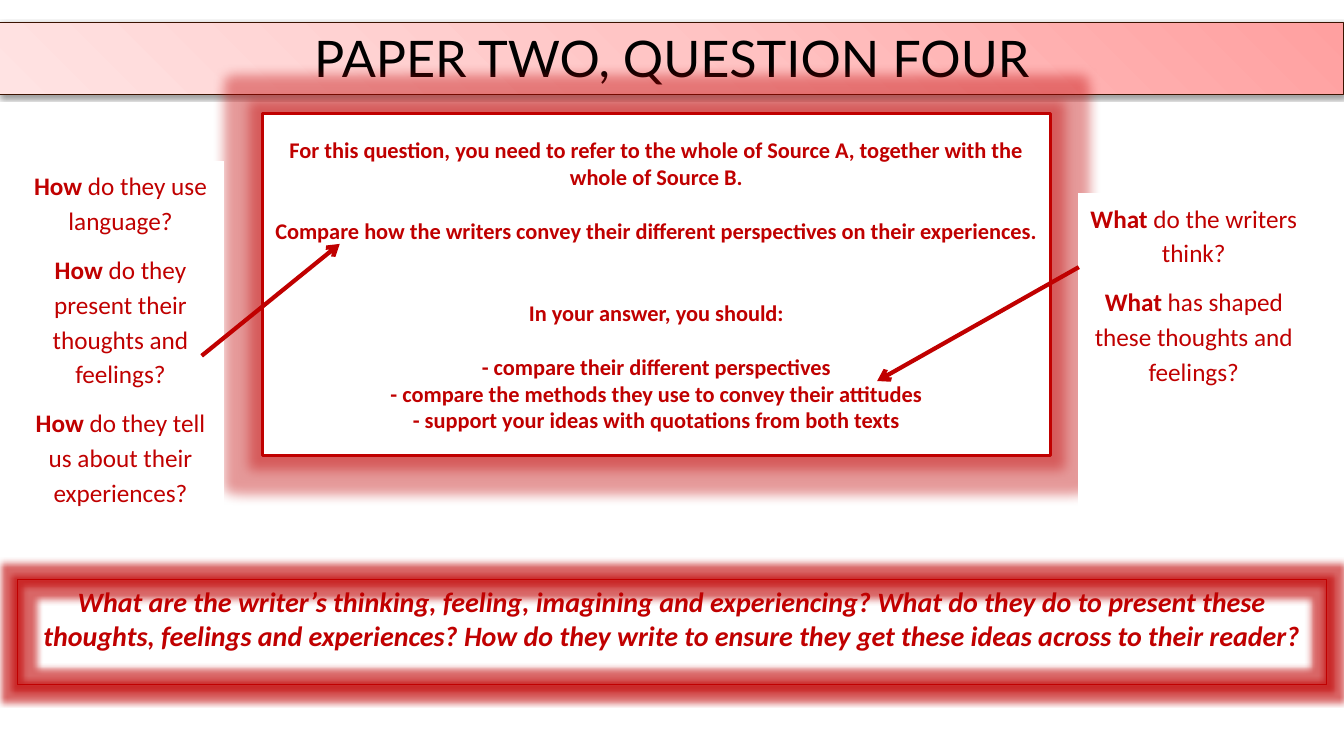
from copy import deepcopy

from pptx import Presentation
from pptx import util as u
from pptx.dml.color import RGBColor
from pptx.enum import shapes, text
from pptx.oxml import parse_xml
from pptx.oxml.ns import nsdecls, qn


def rgb(value):
    return RGBColor.from_string(value)


def effect(tag, attrs, color, alpha):
    """Return a glow or shadow element; alpha is in percent."""
    return parse_xml(
        f'<a:{tag} {nsdecls("a")} {attrs}><a:srgbClr val="{color}">'
        f'<a:alpha val="{alpha * 1000}"/></a:srgbClr></a:{tag}>')


class Slide:
    RED = "C00000"
    WHITE = "FFFFFF"
    BLACK = "000000"
    FONT = "Calibri"

    def __init__(self, prs):
        self.s = prs.slides.add_slide(prs.slide_layouts[6])

    def box(self, at, line, width, fill=None, anchor=text.MSO_ANCHOR.TOP):
        sp = self.s.shapes.add_shape(
            shapes.MSO_SHAPE.RECTANGLE, *(u.Inches(v) for v in at))
        sp.shadow.inherit = False
        if fill:
            sp.fill.solid()
            sp.fill.fore_color.rgb = rgb(fill)
        else:
            sp.fill.background()
        sp.line.color.rgb = rgb(line)
        sp.line.width = u.Pt(width)
        tf = sp.text_frame
        tf.word_wrap = True
        tf.vertical_anchor = anchor
        return sp

    def gradient(self, sp, stops, angle):
        """Fill with (position, colour) stops; angle is counter-clockwise."""
        sp.fill.gradient()
        sp.fill.gradient_angle = angle
        gs_list = sp.element.spPr.find(".//" + qn("a:gsLst"))
        for _ in stops[2:]:
            gs_list.append(deepcopy(gs_list[0]))
        for stop, (position, color) in zip(sp.fill.gradient_stops, stops):
            stop.position = position
            stop.color.rgb = rgb(color)

    def add_effect(self, sp, element):
        sp.element.spPr.find(qn("a:effectLst")).append(element)

    def glow(self, sp, radius, alpha):
        self.add_effect(
            sp, effect("glow", f'rad="{u.Pt(radius)}"', self.RED, alpha))

    def shadow(self, sp, blur, distance, alpha):
        attrs = (f'blurRad="{u.Pt(blur)}" dist="{u.Pt(distance)}" '
                 'dir="5400000" rotWithShape="0"')
        self.add_effect(sp, effect("outerShdw", attrs, self.BLACK, alpha))

    def paragraph(self, sp, runs, size, color=RED, font=FONT, italic=False):
        """Add a centred paragraph of (wording, bold) runs."""
        tf = sp.text_frame
        p = tf.paragraphs[0]
        if p.runs:
            p = tf.add_paragraph()
        p.alignment = text.PP_ALIGN.CENTER
        for wording, bold in runs:
            r = p.add_run()
            r.text = wording
            r.font.size = u.Pt(size)
            r.font.name = font
            r.font.bold = bold
            r.font.italic = italic
            r.font.color.rgb = rgb(color)
        return p

    def prompts(self, at, lead, questions):
        """Add a white box of questions that share a bold first word."""
        sp = self.box(at, self.WHITE, 0.5, self.WHITE)
        for question in questions:
            p = self.paragraph(sp, [(lead, True), (" " + question, False)], 18)
            p.line_spacing = 1.15
            p.space_after = u.Pt(10)

    def arrow(self, start, end):
        c = self.s.shapes.add_connector(
            shapes.MSO_CONNECTOR.STRAIGHT,
            *(u.Inches(v) for v in (*start, *end)))
        c.line.color.rgb = rgb(self.RED)
        c.line.width = u.Pt(3)
        c.line._get_or_add_ln().append(
            parse_xml(f'<a:tailEnd {nsdecls("a")} type="arrow"/>'))
        c.element.spPr.append(parse_xml(f'<a:effectLst {nsdecls("a")}/>'))


def main():
    prs = Presentation()
    prs.slide_width = u.Inches(13.33)
    prs.slide_height = u.Inches(7.5)
    s = Slide(prs)

    title = s.box((0, 0.22, 13.33, 0.72), "3C1301", 0.75)
    s.gradient(title, [(0, "FFA0A0"), (0.5, "FFC5C5"), (1, "FFE3E3")], 225)
    s.shadow(title, 3.1, 1.6, 38)
    s.paragraph(title, [("PAPER TWO, QUESTION FOUR", False)], 36,
                s.BLACK, "Lato")

    summary = s.box((0.17, 5.75, 12.99, 1.04), s.RED, 0.75)
    s.glow(summary, 8, 60)
    s.paragraph(summary, [(
        "What are the writer’s thinking, feeling, imagining and experiencing? "
        "What do they do to present these thoughts, feelings and experiences? "
        "How do they write to ensure they get these ideas across to their "
        "reader?", True)], 20, italic=True)

    task = s.box((2.6, 1.13, 7.82, 3.39), s.RED, 2.25, s.WHITE,
                 text.MSO_ANCHOR.MIDDLE)
    s.glow(task, 18, 40)
    line_height = 19.5
    for wording, gap_lines in [
        ("For this question, you need to refer to the whole of Source A, "
         "together with the whole of Source B.", 0),
        ("Compare how the writers convey their different perspectives on "
         "their experiences.", 1),
        ("In your answer, you should:", 2),
        ("- compare their different perspectives", 1),
        ("- compare the methods they use to convey their attitudes", 0),
        ("- support your ideas with quotations from both texts", 0),
    ]:
        p = s.paragraph(task, [(wording, True)], 16)
        p.space_before = u.Pt(gap_lines * line_height)

    s.prompts((0.17, 1.6, 2.05, 3.48), "How", [
        "do they use language?",
        "do they present their thoughts and feelings?",
        "do they tell us about their experiences?"])
    s.prompts((10.7, 1.92, 2.28, 3.22), "What", [
        "do the writers think?",
        "has shaped these thoughts and feelings?"])

    s.arrow((2, 3.53), (3.37, 2.42))
    s.arrow((10.7, 2.65), (8.7, 3.78))

    prs.save("out.pptx")


if __name__ == "__main__":
    main()
